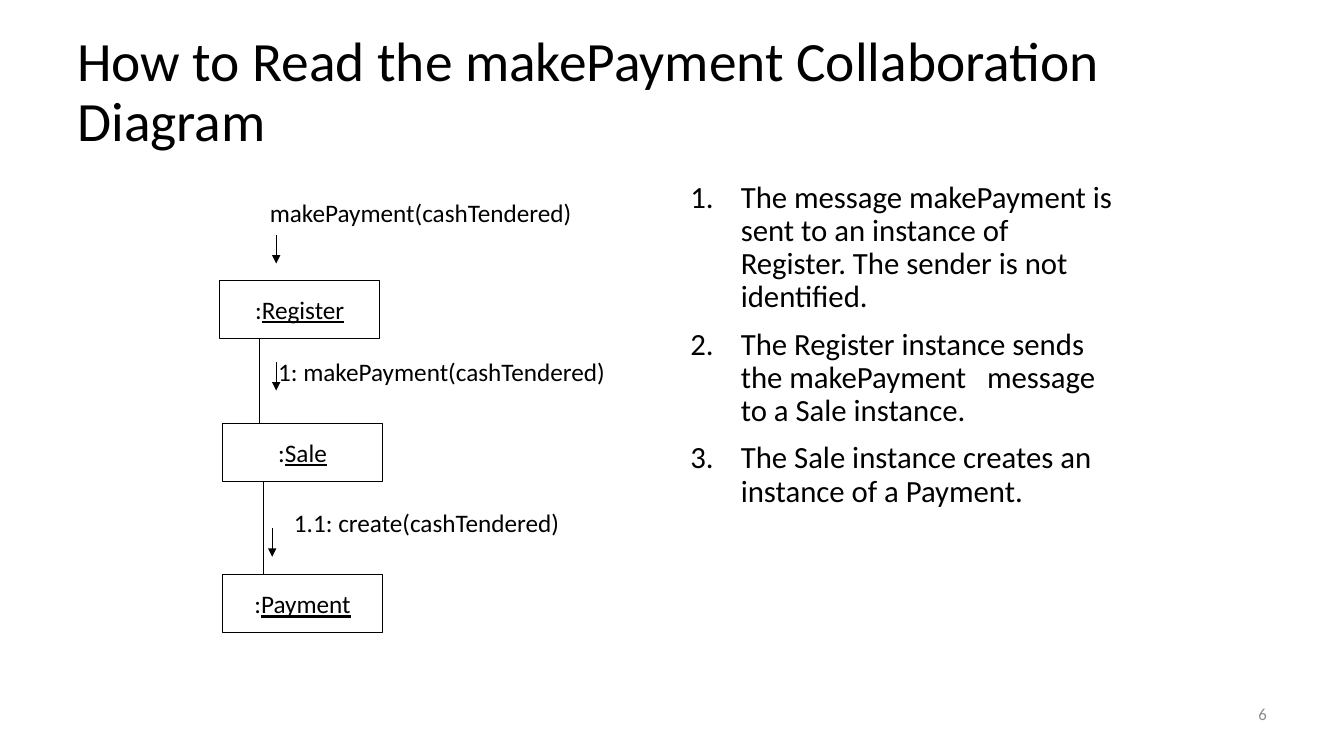
"""Builds a slide that explains a collaboration diagram step by step."""
from dataclasses import dataclass

from lxml.etree import SubElement
from pptx import Presentation
from pptx.dml.color import RGBColor
from pptx.enum.shapes import MSO_CONNECTOR, MSO_SHAPE
from pptx.enum.text import MSO_ANCHOR, MSO_AUTO_SIZE, PP_ALIGN
from pptx.oxml.ns import qn
from pptx.util import Cm, Pt


@dataclass(frozen=True)
class Theme:
    font: str = "Calibri"
    ink: RGBColor = RGBColor(0x00, 0x00, 0x00)
    paper: RGBColor = RGBColor(0xFF, 0xFF, 0xFF)
    muted: RGBColor = RGBColor(0x8C, 0x8C, 0x8C)
    title: Pt = Pt(39.6)
    body: Pt = Pt(22)
    diagram: Pt = Pt(18)
    footer: Pt = Pt(12)
    stroke: Pt = Pt(0.75)


THEME = Theme()
OBJECT_SIZE = (4.03, 1.46)
LABEL_HEIGHT = 1.02
ARROW_LENGTH = 0.72

OBJECTS = [("Register", 5.54, 7.06), ("Sale", 5.61, 10.67), ("Payment", 5.61, 14.48)]
LINKS = [(6.55, 8.53, 10.72), (6.63, 12.14, 14.48)]
MESSAGES = [
    ("makePayment(cashTendered)", 6.55, 4.85, 8.2),
    ("1: makePayment(cashTendered)", 6.76, 8.86, 8.84),
    ("1.1: create(cashTendered)", 7.16, 12.65, 7.29),
]
ARROWS = [(6.96, 5.92), (6.96, 9.12), (6.86, 13.31)]
STEPS = [
    "The message makePayment is sent to an instance of Register. The sender is not identified.",
    "The Register instance sends the makePayment   message to a Sale instance.",
    "The Sale instance creates an instance of a Payment.",
]


def style(paragraph, size, color=THEME.ink):
    paragraph.font.name = THEME.font
    paragraph.font.size = size
    paragraph.font.color.rgb = color


def add_text(slide, text, box, size, color=THEME.ink, anchor=MSO_ANCHOR.TOP):
    textbox = slide.shapes.add_textbox(*map(Cm, box))
    frame = textbox.text_frame
    frame.word_wrap = True
    frame.vertical_anchor = anchor
    frame.text = text
    for paragraph in frame.paragraphs:
        style(paragraph, size, color)
    return frame


def add_steps(slide, steps, box):
    frame = add_text(slide, "\n".join(steps), box, THEME.body)
    for paragraph in frame.paragraphs:
        paragraph.line_spacing = 0.9
        paragraph.space_before = Pt(10)
        properties = paragraph.font._element.getparent()
        properties.set("marL", str(Cm(1.27)))
        properties.set("indent", str(Cm(-1.27)))
        numbering = SubElement(properties, qn("a:buAutoNum"), type="arabicPeriod")
        paragraph.font._element.addprevious(numbering)


def add_object(slide, name, left, top):
    box = slide.shapes.add_shape(
        MSO_SHAPE.RECTANGLE, *map(Cm, (left, top, *OBJECT_SIZE))
    )
    box.shadow.inherit = False
    box.fill.solid()
    box.fill.fore_color.rgb = THEME.paper
    box.line.color.rgb = THEME.ink
    box.line.width = THEME.stroke
    box.text_frame.word_wrap = False
    box.text_frame.vertical_anchor = MSO_ANCHOR.MIDDLE
    paragraph = box.text_frame.paragraphs[0]
    paragraph.alignment = PP_ALIGN.CENTER
    style(paragraph, THEME.diagram)
    paragraph.add_run().text = ":"
    class_name = paragraph.add_run()
    class_name.text = name
    class_name.font.underline = True


def add_vertical(slide, x, top, bottom, arrow=False):
    line = slide.shapes.add_connector(
        MSO_CONNECTOR.STRAIGHT, *map(Cm, (x, top, x, bottom))
    )
    line.line.color.rgb = THEME.ink
    line.line.width = THEME.stroke
    if arrow:
        SubElement(line.line._get_or_add_ln(), qn("a:tailEnd"), type="triangle")
    SubElement(line._element.spPr, qn("a:effectLst"))


def add_message(slide, text, left, top, width):
    frame = add_text(slide, text, (left, top, width, LABEL_HEIGHT), THEME.diagram)
    frame.word_wrap = False
    frame.auto_size = MSO_AUTO_SIZE.SHAPE_TO_FIT_TEXT


def main():
    deck = Presentation()
    deck.slide_width, deck.slide_height = Cm(33.87), Cm(19.05)
    slide = deck.slides.add_slide(deck.slide_layouts[6])

    title = add_text(
        slide, "How to Read the makePayment Collaboration Diagram",
        (1.7, 0.76, 30.48, 3.18), THEME.title, anchor=MSO_ANCHOR.MIDDLE,
    )
    title.paragraphs[0].line_spacing = 0.9
    add_steps(slide, STEPS, (17.15, 4.45, 11.2, 12.57))

    for link in LINKS:
        add_vertical(slide, *link)
    for instance in OBJECTS:
        add_object(slide, *instance)
    for message in MESSAGES:
        add_message(slide, *message)
    for x, top in ARROWS:
        add_vertical(slide, x, top, top + ARROW_LENGTH, arrow=True)

    number = add_text(
        slide, "6", (24.28, 17.36, 7.9, 1.27),
        THEME.footer, THEME.muted, MSO_ANCHOR.MIDDLE,
    )
    number.paragraphs[0].alignment = PP_ALIGN.RIGHT
    deck.save("out.pptx")


if __name__ == "__main__":
    main()
